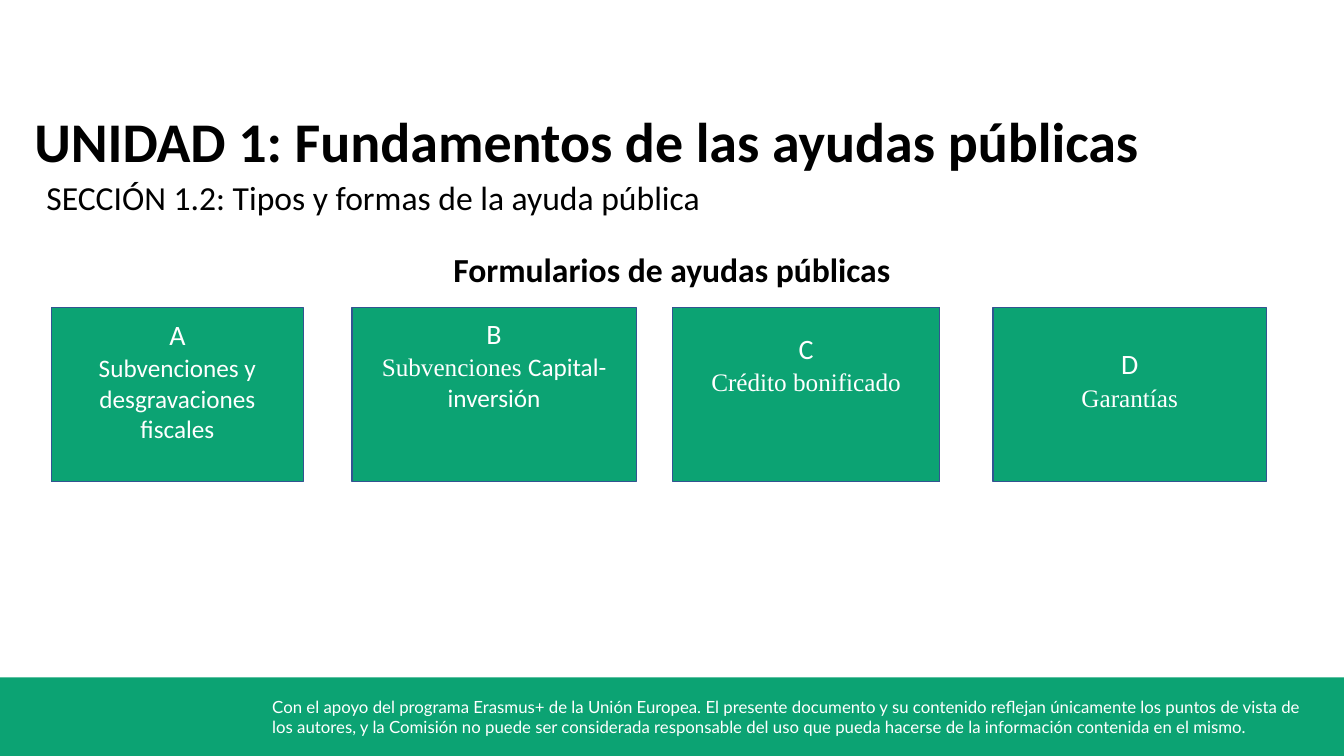
from pptx import Presentation
from pptx.dml.color import RGBColor
from pptx.enum.shapes import MSO_SHAPE
from pptx.enum.text import MSO_ANCHOR, MSO_AUTO_SIZE, PP_ALIGN
from pptx.util import Inches, Pt

LEFT, CENTER = PP_ALIGN.LEFT, PP_ALIGN.CENTER
TOP = MSO_ANCHOR.TOP
NO_AUTOFIT = MSO_AUTO_SIZE.NONE
RECTANGLE, PROCESS = MSO_SHAPE.RECTANGLE, MSO_SHAPE.FLOWCHART_PROCESS

COLORS = {"green": "0CA373", "border": "325491", "black": "000000", "white": "FFFFFF"}
SANS, SERIF, FOOTER_FONT = "Calibri", "Times New Roman", "Lato"

SLIDE_WIDTH, SLIDE_HEIGHT = Inches(13.33), Inches(7.5)
COLUMN = SLIDE_WIDTH / 133.3
ROW = SLIDE_HEIGHT / 75

CARDS = [
    (5.1, 25, 1, "A", [("Subvenciones y desgravaciones fiscales", SANS)]),
    (34.9, 28.2, 0.9, "B", [("Subvenciones ", SERIF), ("Capital-inversión", SANS)]),
    (66.7, 26.5, 2.4, "C", [("Crédito bonificado", SERIF)]),
    (98.5, 27.1, 3.9, "D", [("Garantías", SERIF)]),
]
FOOTER = (
    "Con el apoyo del programa Erasmus+ de la Unión Europea. El presente documento "
    "y su contenido reflejan únicamente los puntos de vista de los autores, y la "
    "Comisión no puede ser considerada responsable del uso que pueda hacerse de la "
    "información contenida en el mismo."
)


def color(name):
    return RGBColor.from_string(COLORS[name])


def place(left, top, width, height):
    return [round(left * COLUMN), round(top * ROW), round(width * COLUMN), round(height * ROW)]


def set_frame(shape, side=0, top=0):
    frame = shape.text_frame
    frame.auto_size = NO_AUTOFIT
    frame.word_wrap = True
    frame.vertical_anchor = TOP
    frame.margin_left = frame.margin_right = round(side * COLUMN)
    frame.margin_top, frame.margin_bottom = round(top * ROW), 0
    return frame


def add_span(para, text, size, font, ink, bold=False):
    span = para.add_run()
    span.text = text
    span.font.size = Pt(size)
    span.font.name = font
    span.font.bold = bold
    span.font.color.rgb = color(ink)


def add_line(page, box, text, size, font=SANS, ink="black", bold=False, align=LEFT):
    para = set_frame(page.shapes.add_textbox(*place(*box))).paragraphs[0]
    para.alignment = align
    add_span(para, text, size, font, ink, bold)


def add_block(page, kind, box):
    block = page.shapes.add_shape(kind, *place(*box))
    block.shadow.inherit = False
    block.fill.solid()
    block.fill.fore_color.rgb = color("green")
    return block


def build_footer(page, left, top, width, height):
    add_block(page, RECTANGLE, (left, top, width, height)).line.fill.background()
    add_line(page, (left + 27, top + 1.9, width - 31.1, height - 3.8),
             FOOTER, 12, FOOTER_FONT, "white")


def build_headings(page, left, top, width):
    title = page.shapes.title
    title.left, title.top, title.width, title.height = place(left + 3.4, top, width - 6.8, 6.8)
    para = set_frame(title).paragraphs[0]
    para.alignment = LEFT
    add_span(para, "UNIDAD 1: Fundamentos de las ayudas públicas", 40, SANS, "black", True)
    add_line(page, (left + 4.6, top + 6.9, width - 9.2, 4.1),
             "SECCIÓN 1.2: Tipos y formas de la ayuda pública", 24)
    add_line(page, (left, top + 14.1, width, 4.1),
             "Formularios de ayudas públicas", 24, bold=True, align=CENTER)


def build_card(page, box, inset, letter, spans):
    card = add_block(page, PROCESS, box)
    card.line.color.rgb = color("border")
    card.line.width = Pt(1)
    frame = set_frame(card, 1, inset)
    heading = frame.paragraphs[0]
    heading.alignment = CENTER
    add_span(heading, letter, 20, SANS, "white")
    body = frame.add_paragraph()
    body.alignment = CENTER
    body.space_before = Pt(1.1)
    for text, font in spans:
        add_span(body, text, 18, font, "white")


def main():
    deck = Presentation()
    deck.slide_width, deck.slide_height = SLIDE_WIDTH, SLIDE_HEIGHT
    page = deck.slides.add_slide(deck.slide_layouts.get_by_name("Title Only"))
    build_footer(page, 0, 67.2, 133.3, 7.8)
    build_headings(page, 0, 10.6, 133.3)
    for left, width, inset, letter, spans in CARDS:
        build_card(page, (left, 30.5, width, 17.3), inset, letter, spans)
    deck.save("out.pptx")


if __name__ == "__main__":
    main()
